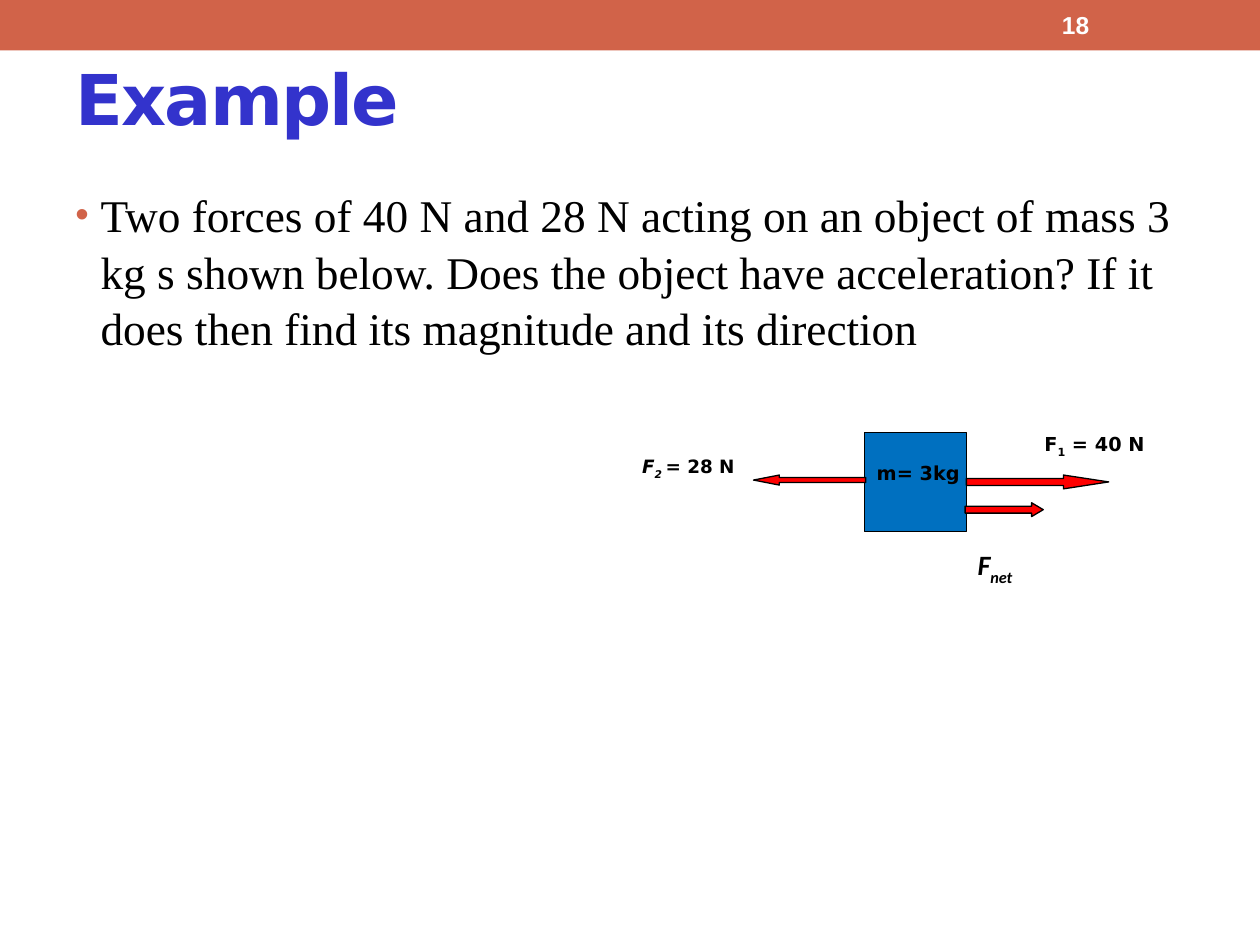
from dataclasses import dataclass, field
from typing import Any

import pptx
import pptx.dml.color
import pptx.enum.shapes
import pptx.enum.text
import pptx.oxml
import pptx.oxml.ns
import pptx.util

SHAPE = pptx.enum.shapes.MSO_SHAPE
ANCHOR = pptx.enum.text.MSO_ANCHOR
COLS, ROWS = 100, 75  # grid over the slide


@dataclass(frozen=True)
class Theme:
    band: str = "D16349"
    title: str = "3333CC"
    ink: str = "000000"
    paper: str = "FFFFFF"
    mass: str = "0070C0"
    force: str = "FF0000"
    title_pt: float = 40
    body_pt: float = 25.9
    number_pt: float = 14
    label_pt: float = 11
    small_pt: float = 10.5
    net_pt: float = 16
    gap_pt: float = 20
    line_pt: float = 0.75
    sans: str = "DejaVu Sans"


@dataclass(frozen=True)
class Box:
    col: float
    row: float
    cols: float
    rows: float


@dataclass(frozen=True)
class Run:
    text: str
    size: float
    font: str = Theme.sans
    color: str = Theme.ink
    fmt: dict[str, Any] = field(default_factory=lambda: {"bold": True})
    xml: dict[str, str] = field(default_factory=dict)


@dataclass(frozen=True)
class Label:
    box: Box
    runs: tuple[Run, ...]
    anchor: Any = ANCHOR.TOP


@dataclass(frozen=True)
class Figure:
    kind: Any
    box: Box
    fill: str
    line: bool = True
    adj: tuple[float, ...] = ()


T = Theme()
BOLD_ITALIC = {"bold": True, "italic": True}
SUB = {"baseline": "-25000"}

prs = pptx.Presentation()
prs.slide_width, prs.slide_height = pptx.util.Inches(10), pptx.util.Inches(7.5)


def place(b: Box) -> tuple[int, int, int, int]:
    w, h = prs.slide_width / COLS, prs.slide_height / ROWS
    return round(b.col * w), round(b.row * h), round(b.cols * w), round(b.rows * h)


def rgb(color: str) -> pptx.dml.color.RGBColor:
    return pptx.dml.color.RGBColor.from_string(color)


def draw_figure(shapes: Any, f: Figure) -> None:
    sp = shapes.add_shape(f.kind, *place(f.box))
    sp.shadow.inherit = False
    sp.fill.solid()
    sp.fill.fore_color.rgb = rgb(f.fill)
    for i, value in enumerate(f.adj):
        sp.adjustments[i] = value
    if f.line:
        sp.line.color.rgb = rgb(T.ink)
        sp.line.width = pptx.util.Pt(T.line_pt)
    else:
        sp.line.fill.background()


def draw_label(shapes: Any, label: Label) -> Any:
    tf = shapes.add_textbox(*place(label.box)).text_frame
    tf.word_wrap = True
    tf.vertical_anchor = label.anchor
    p = tf.paragraphs[0]
    for run in label.runs:
        r = p.add_run()
        r.text = run.text
        fmt = {"size": pptx.util.Pt(run.size), "name": run.font, **run.fmt}
        for name, value in fmt.items():
            setattr(r.font, name, value)
        r.font.color.rgb = rgb(run.color)
        for name, value in run.xml.items():
            r.font._element.set(name, value)
    return p


def add_bullet(p: Any, char: str, color: str, percent: int, indent: float) -> None:
    ppr = p._p.get_or_add_pPr()
    hang = pptx.util.Inches(indent)
    ppr.set("marL", str(hang))
    ppr.set("indent", str(-hang))
    ns = pptx.oxml.ns.nsdecls("a")
    for xml in (
        f'<a:buClr {ns}><a:srgbClr val="{color}"/></a:buClr>',
        f'<a:buSzPct {ns} val="{percent * 1000}"/>',
        f'<a:buFont {ns} typeface="Arial"/>',
        f'<a:buChar {ns} char="{char}"/>',
    ):
        ppr.append(pptx.oxml.parse_xml(xml))


# Slide content
BAND = Figure(SHAPE.RECTANGLE, Box(0, 0, COLS, 4), T.band, line=False)
TITLE = Label(Box(5, 3, 90, 9.5),
              (Run("Example", T.title_pt, color=T.title, xml={"spc": "-100"}),), ANCHOR.MIDDLE)
NUMBER = Label(Box(83.3, 0.2, 11.7, 3.6),
               (Run("18", T.number_pt, "Arial", T.paper),), ANCHOR.MIDDLE)
QUESTION = Label(Box(5, 14.2, 90, 16.7), (Run(
    "Two forces of 40 N and 28 N acting on an object of mass 3 kg s shown below. "
    "Does the object have acceleration? If it does then find its magnitude and its direction",
    T.body_pt, "Times New Roman", fmt={}),))

# Force diagram: the mass, F1, F2 and the net force
FIGURES = (
    Figure(SHAPE.RECTANGLE, Box(68.6, 34.3, 8.1, 7.9), T.mass),
    Figure(SHAPE.RIGHT_ARROW, Box(76.7, 37.7, 11.3, 1.1), T.force, adj=(0.5, 3.27)),
    Figure(SHAPE.LEFT_ARROW, Box(59.8, 37.7, 8.9, 0.8), T.force, adj=(0.5, 2.57)),
    Figure(SHAPE.RIGHT_ARROW, Box(76.6, 39.9, 6.2, 1.1), T.force, adj=(0.5, 0.84)),
)
LABELS = (
    Label(Box(81.9, 33.8, 11.2, 3.9), (
        Run("F", T.label_pt), Run("1", T.label_pt, xml=SUB), Run(" = 40 N", T.label_pt))),
    Label(Box(49.2, 34.3, 10.9, 5.9), (
        Run(" ", T.gap_pt, "Arial", fmt=BOLD_ITALIC),
        Run("F", T.small_pt, fmt=BOLD_ITALIC),
        Run("2 ", T.small_pt, fmt=BOLD_ITALIC, xml=SUB),
        Run("= 28 N", T.small_pt))),
    Label(Box(76.6, 42.5, 11.5, 5), (
        Run("F", T.net_pt, "Calibri", fmt=BOLD_ITALIC),
        Run("net", T.net_pt, "Calibri", fmt=BOLD_ITALIC, xml={"baseline": "-30000"})),
        ANCHOR.MIDDLE),
    Label(Box(68.6, 36.1, 9.3, 3.9), (Run("m= 3kg", T.label_pt),)),
)


def main() -> None:
    s = prs.slides.add_slide(prs.slide_layouts[6])
    draw_figure(s.shapes, BAND)
    draw_label(s.shapes, TITLE)
    p = draw_label(s.shapes, QUESTION)
    for name, value in {"line_spacing": 1.04, "space_before": pptx.util.Pt(2)}.items():
        setattr(p, name, value)
    add_bullet(p, "•", T.band, 85, 0.2)
    draw_label(s.shapes, NUMBER)

    diagram = s.shapes.add_group_shape().shapes
    for figure in FIGURES:
        draw_figure(diagram, figure)
    for label in LABELS:
        draw_label(diagram, label)
    prs.save("out.pptx")


if __name__ == "__main__":
    main()
